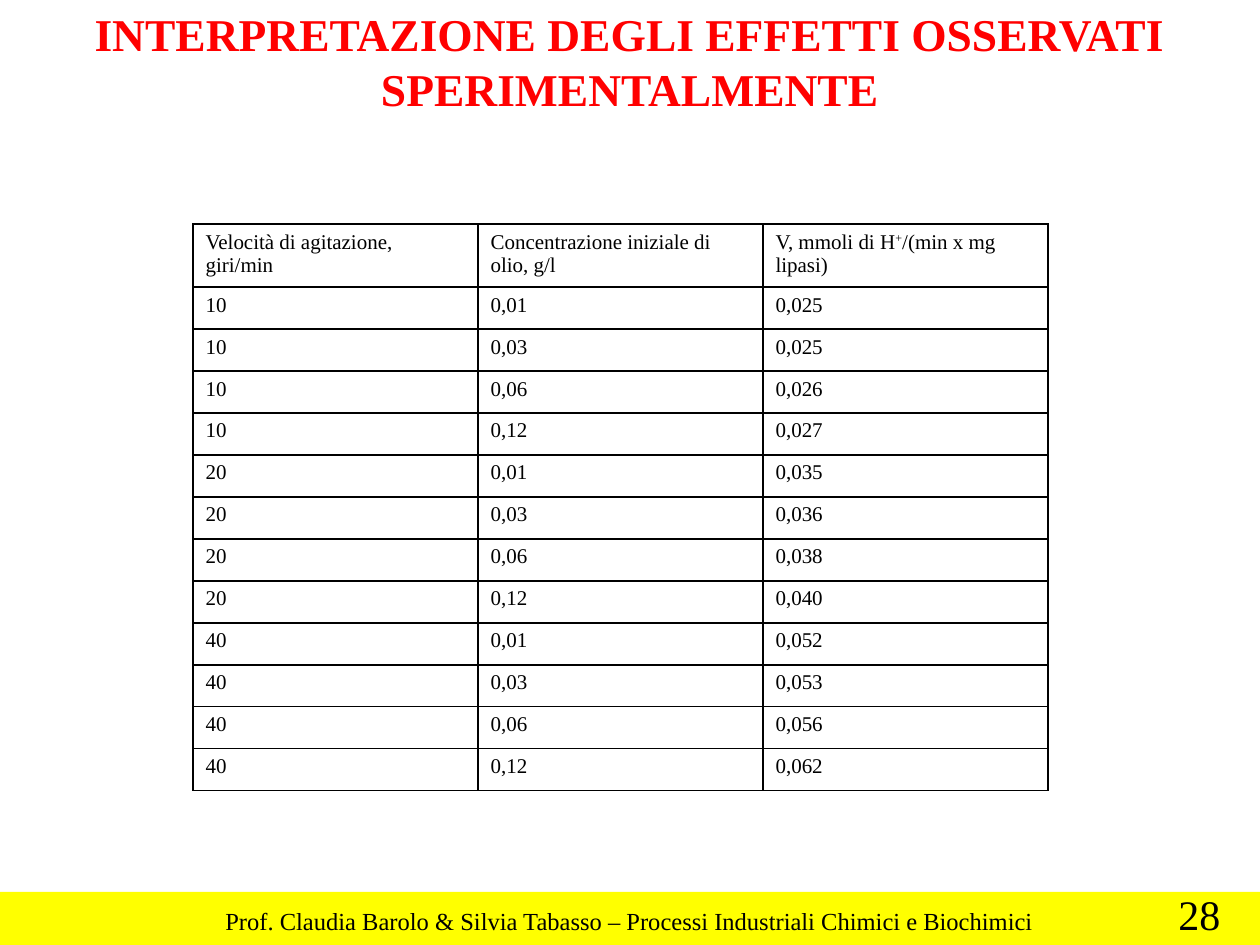
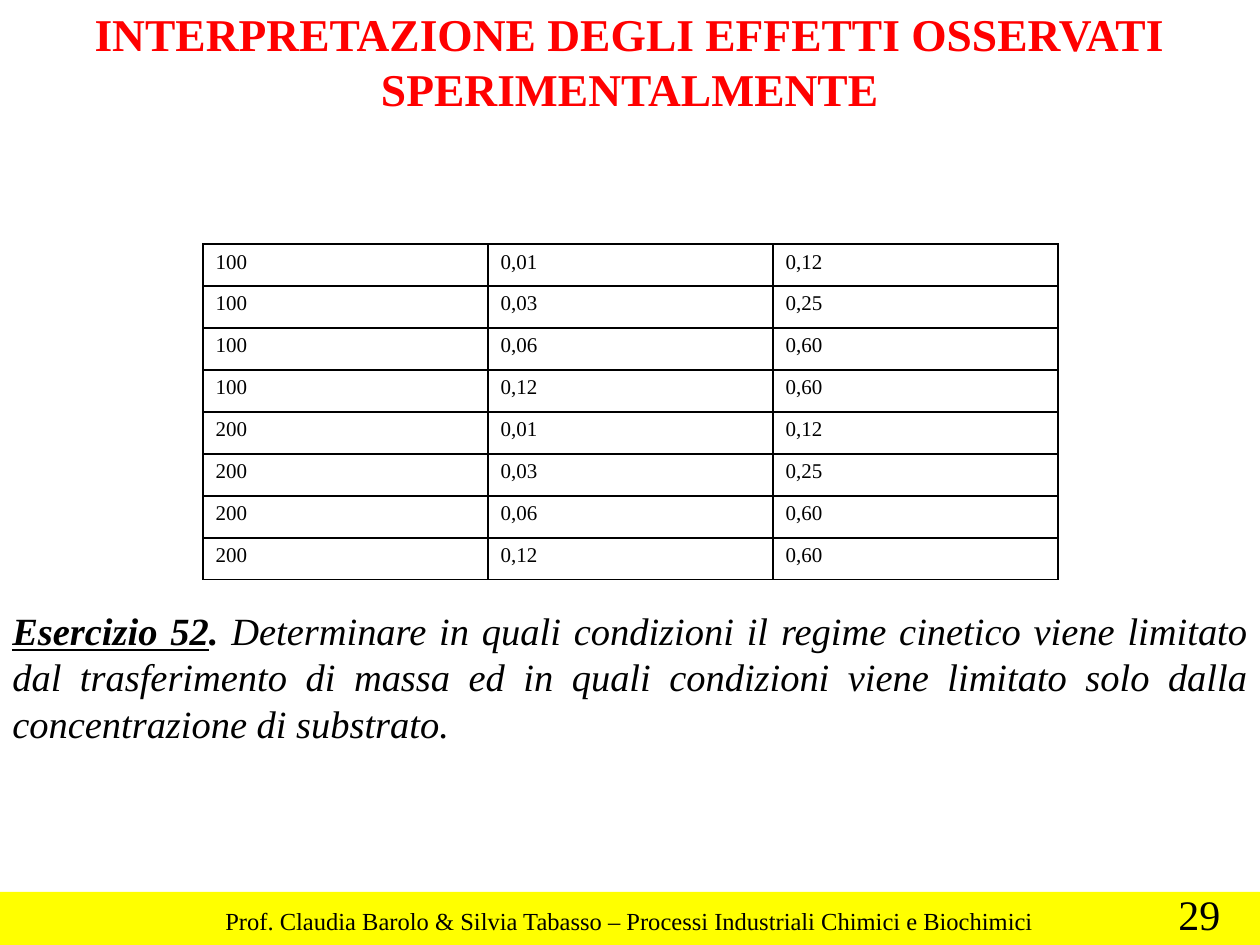
from itertools import product

from lxml.etree import SubElement
from pptx import Presentation
from pptx.dml.color import RGBColor
from pptx.enum.shapes import MSO_SHAPE
from pptx.enum.text import MSO_AUTO_SIZE as AUTO, PP_ALIGN as ALIGN
from pptx.oxml.ns import qn
from pptx.util import Emu, Pt

BLACK = RGBColor(0x00, 0x00, 0x00)
RED = RGBColor(0xFF, 0x00, 0x00)
YELLOW = RGBColor(0xFF, 0xFF, 0x00)
FONT = "Times New Roman"
EMU_PER_PX = 914400 / 126
WIDTH, HEIGHT = 1260, 945
COL_WIDTH, ROW_HEIGHT, HEADER_HEIGHT = 285, 42, 63

TITLE = "INTERPRETAZIONE DEGLI EFFETTI OSSERVATI SPERIMENTALMENTE"
FOOTER = "Prof. Claudia Barolo & Silvia Tabasso – Processi Industriali Chimici e Biochimici"
HEADER = [
    [("Velocità di agitazione, giri/min", {})],
    [("Concentrazione iniziale di olio, g/l", {})],
    [("V, mmoli di H", {}), ("+", {"raised": True}), ("/(min x mg lipasi)", {})],
]
CONCENTRATIONS = ["0,01", "0,03", "0,06", "0,12"]
SLOW_RATES = ["0,025", "0,025", "0,026", "0,027",
              "0,035", "0,036", "0,038", "0,040",
              "0,052", "0,053", "0,056", "0,062"]
FAST_RATES = ["0,12", "0,25", "0,60", "0,60"] * 2
EXERCISE = [
    ("Esercizio 52", {"bold": True, "italic": True, "underline": True}),
    (". ", {"bold": True, "italic": True}),
    ("Determinare in quali condizioni il regime cinetico viene limitato dal "
     "trasferimento di massa ed in quali condizioni viene limitato solo dalla "
     "concentrazione di substrato.", {"italic": True}),
]


def px(n):
    return Emu(round(n * EMU_PER_PX))


def measurements(speeds, rates):
    """Pair every speed and concentration with its measured rate."""
    pairs = product(speeds, CONCENTRATIONS)
    return [[[(value, {})] for value in (*pair, rate)]
            for pair, rate in zip(pairs, rates)]


class Deck:
    def __init__(self):
        self.prs = Presentation()
        self.prs.slide_width, self.prs.slide_height = px(WIDTH), px(HEIGHT)
        self.s = None

    def slide(self, number):
        """Start a slide with the shared title, band, footer and number."""
        self.s = self.prs.slides.add_slide(self.prs.slide_layouts[6])
        self.band(0, 892, WIDTH, 53, YELLOW)
        self.text(213, 900, 845, 43, [(FOOTER, {})], 14, wrap=False)
        self.text(1166, 882, 67, 63, [(str(number), {})], 24, wrap=False)
        self.text(0, 0, WIDTH, 122, [(TITLE, {"bold": True})], 26, RED, ALIGN.CENTER)

    def band(self, x, y, w, h, color):
        sp = self.s.shapes.add_shape(MSO_SHAPE.RECTANGLE, px(x), px(y), px(w), px(h))
        sp.shadow.inherit = False
        sp.fill.solid()
        sp.fill.fore_color.rgb = color
        sp.line.fill.background()

    def runs(self, p, parts, size, color=BLACK):
        for text, style in parts:
            r = p.add_run()
            r.text = text
            r.font.name, r.font.size = FONT, Pt(size)
            r.font.color.rgb = color
            r.font.bold = style.get("bold", False)
            r.font.italic = style.get("italic", False)
            r.font.underline = style.get("underline", False)
            if style.get("raised"):
                r.font._element.set("baseline", "30000")

    def text(self, x, y, w, h, parts, size, color=BLACK, align=ALIGN.LEFT, wrap=True):
        tf = self.s.shapes.add_textbox(px(x), px(y), px(w), px(h)).text_frame
        tf.word_wrap = wrap
        tf.auto_size = AUTO.SHAPE_TO_FIT_TEXT
        p = tf.paragraphs[0]
        p.alignment = align
        self.runs(p, parts, size, color)

    def borders(self, cell):
        tc_pr = cell._tc.get_or_add_tcPr()
        for side in ("lnL", "lnR", "lnT", "lnB"):
            ln = SubElement(tc_pr, qn(f"a:{side}"), w=str(Pt(1)))
            fill = SubElement(ln, qn("a:solidFill"))
            SubElement(fill, qn("a:srgbClr"), val=str(BLACK))

    def table(self, x, y, rows, heights):
        cols = len(rows[0])
        frame = self.s.shapes.add_table(len(rows), cols, px(x), px(y),
                                        px(cols * COL_WIDTH), px(sum(heights)))
        table = frame.table
        table.first_row = table.horz_banding = False
        for column in table.columns:
            column.width = px(COL_WIDTH)
        for row, height, values in zip(table.rows, heights, rows):
            row.height = px(height)
            for cell, parts in zip(row.cells, values):
                self.borders(cell)
                cell.fill.background()
                self.runs(cell.text_frame.paragraphs[0], parts, 12)


def main():
    deck = Deck()

    deck.slide(28)
    slow = measurements(["10", "20", "40"], SLOW_RATES)
    deck.table(193, 224, [HEADER] + slow, [HEADER_HEIGHT] + [ROW_HEIGHT] * len(slow))

    deck.slide(29)
    deck.text(0, 601, WIDTH, 151, EXERCISE, 22, align=ALIGN.JUSTIFY)
    fast = measurements(["100", "200"], FAST_RATES)
    deck.table(203, 244, fast, [ROW_HEIGHT] * len(fast))

    deck.prs.save("out.pptx")


if __name__ == "__main__":
    main()
